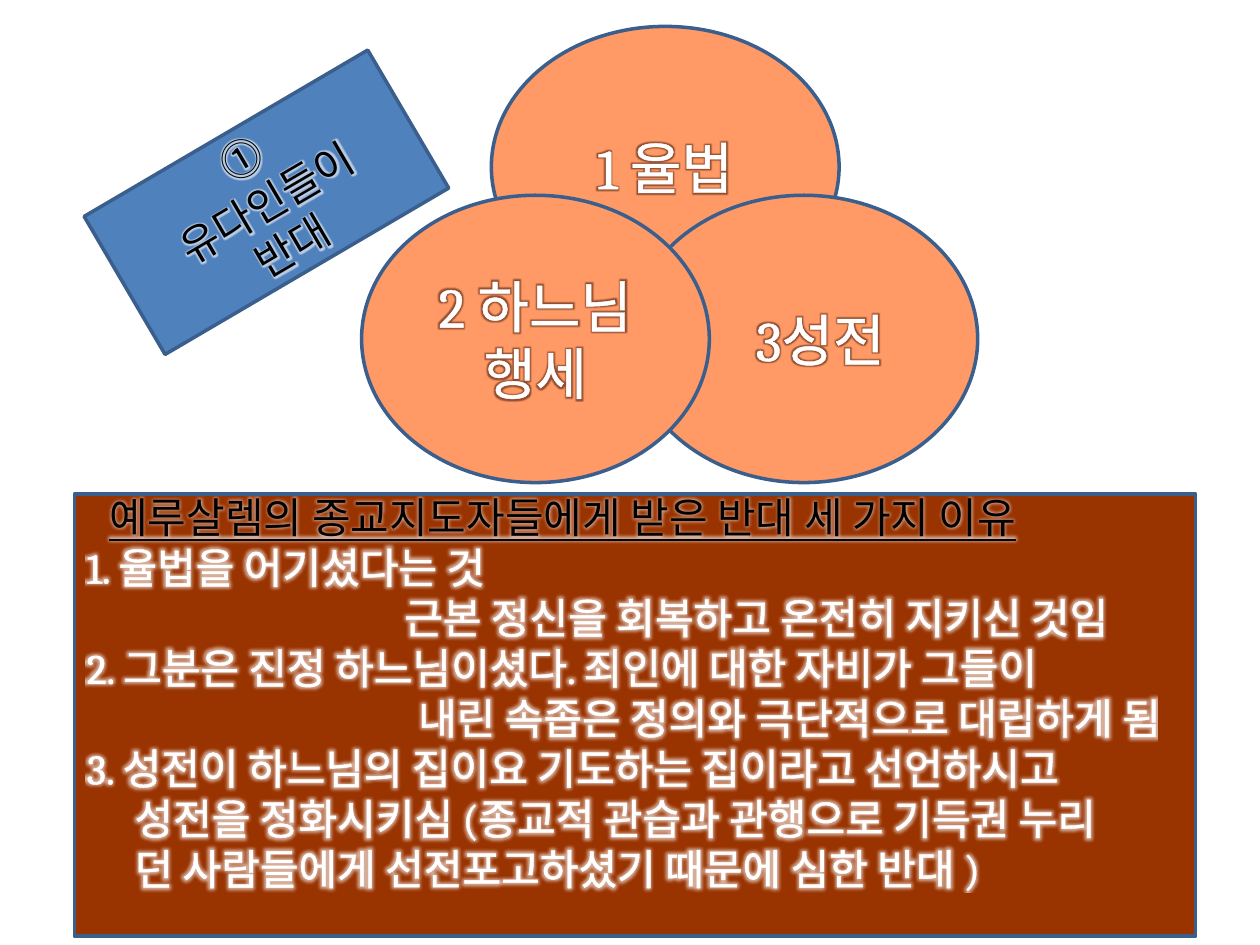
"""Builds the slide on the three reasons for the opposition."""
from pptx import Presentation
from pptx.dml.color import RGBColor
from pptx.enum.shapes import MSO_SHAPE
from pptx.enum.text import MSO_ANCHOR, PP_ALIGN
from pptx.oxml import parse_xml
from pptx.oxml.ns import nsdecls, qn
from pptx.util import Inches, Pt

HUES = {"peach": "FF9966", "edge": "3A5F8C", "rust": "993300", "blue": "4F81BD",
        "white": "FFFFFF", "black": "000000", "ink": "1E1C11", "umber": "4A1C0A"}
LATIN, HANGUL = "Cambria", "Noto Sans CJK KR"

deck = Presentation()
deck.slide_width, deck.slide_height = Inches(10), Inches(7.5)
slide = deck.slides.add_slide(deck.slide_layouts[6])


def panel(kind, left, top, width, height, fill):
    shape = slide.shapes.add_shape(kind, *map(Inches, (left, top, width, height)))
    shape.shadow.inherit = False
    shape.fill.solid()
    shape.fill.fore_color.rgb = RGBColor.from_string(HUES[fill])
    shape.line.color.rgb = RGBColor.from_string(HUES["edge"])
    shape.line.width = Pt(2)
    shape.text_frame.word_wrap = True
    shape.text_frame.vertical_anchor = MSO_ANCHOR.MIDDLE
    return shape


def write(frame, lines, size, color, rim, weight, glow, face=LATIN, align=PP_ALIGN.CENTER):
    for row, text in enumerate(lines):
        para = frame.add_paragraph() if row else frame.paragraphs[0]
        para.alignment = align
        para.line_spacing = Pt(size * 1.195)
        run = para.add_run()
        run.text = text
        font = run.font
        font.size, font.name = Pt(size), face
        font.color.rgb = RGBColor.from_string(HUES[color])
        props = run._r.get_or_add_rPr()
        props.insert(0, parse_xml(
            f'<a:ln {nsdecls("a")} w="{Pt(weight)}"><a:solidFill>'
            f'<a:srgbClr val="{HUES[rim]}"/></a:solidFill></a:ln>'))
        props.insert(2, parse_xml(
            f'<a:effectLst {nsdecls("a")}><a:glow rad="{Pt(4)}"><a:srgbClr val="{HUES[glow]}">'
            f'<a:alpha val="60000"/></a:srgbClr></a:glow></a:effectLst>'))
        props.append(parse_xml(f'<a:ea {nsdecls("a")} typeface="{HANGUL}"/>'))


circles = [(3.9, 0.21, 2.23, 0.1, ["1 율법"]),
           (5, 1.55, 2.28, 0.36, ["3성전"]),
           (2.87, 1.55, 2.28, 0.1, ["2 하느님", "행세"])]
for left, top, height, inset, lines in circles:
    disc = panel(MSO_SHAPE.OVAL, left, top, 2.76, height, "peach")
    disc.text_frame.margin_left = Inches(inset)
    write(disc.text_frame, lines, 32, "white", "white", 1.45, "umber")

reasons = [(0.18, "예루살렘의 종교지도자들에게 받은 반대 세 가지 이유"),
           (0, "1. 율법을 어기셨다는 것"),
           (2.52, "근본 정신을 회복하고 온전히 지키신 것임"),
           (0, "2. 그분은 진정 하느님이셨다. 죄인에 대한 자비가 그들이"),
           (2.63, "내린 속좁은 정의와 극단적으로 대립하게 됨"),
           (0, "3. 성전이 하느님의 집이요 기도하는 집이라고 선언하시고"),
           (0.38, "성전을 정화시키심 (종교적 관습과 관행으로 기득권 누리"),
           (0.38, "던 사람들에게 선전포고하셨기 때문에 심한 반대 )")]
board = panel(MSO_SHAPE.RECTANGLE, 0.59, 3.92, 8.9, 3.51, "rust")
board.text_frame.margin_bottom = Inches(0.41)
write(board.text_frame, [text for _, text in reasons], 24, "white", "white", 1.45,
      "white", align=PP_ALIGN.LEFT)
for para, (dent, _) in zip(board.text_frame.paragraphs, reasons):
    para._p.get_or_add_pPr().set("marL", str(Inches(dent)))
head = board.text_frame.paragraphs[0].runs[0]
head.font.underline = True
head.font.color.rgb = RGBColor.from_string(HUES["black"])
rim = head._r.rPr.find(qn("a:ln")).find(qn("a:solidFill"))
rim.find(qn("a:srgbClr")).set("val", HUES["ink"])

label = panel(MSO_SHAPE.RECTANGLE, 0.81, 0.97, 2.61, 1.27, "blue")
label.rotation = 329.6
write(label.text_frame, ["⓵", "유다인들이", "반대"], 24, "black", "ink", 0.25,
      "white", face=HANGUL)

deck.save("out.pptx")
